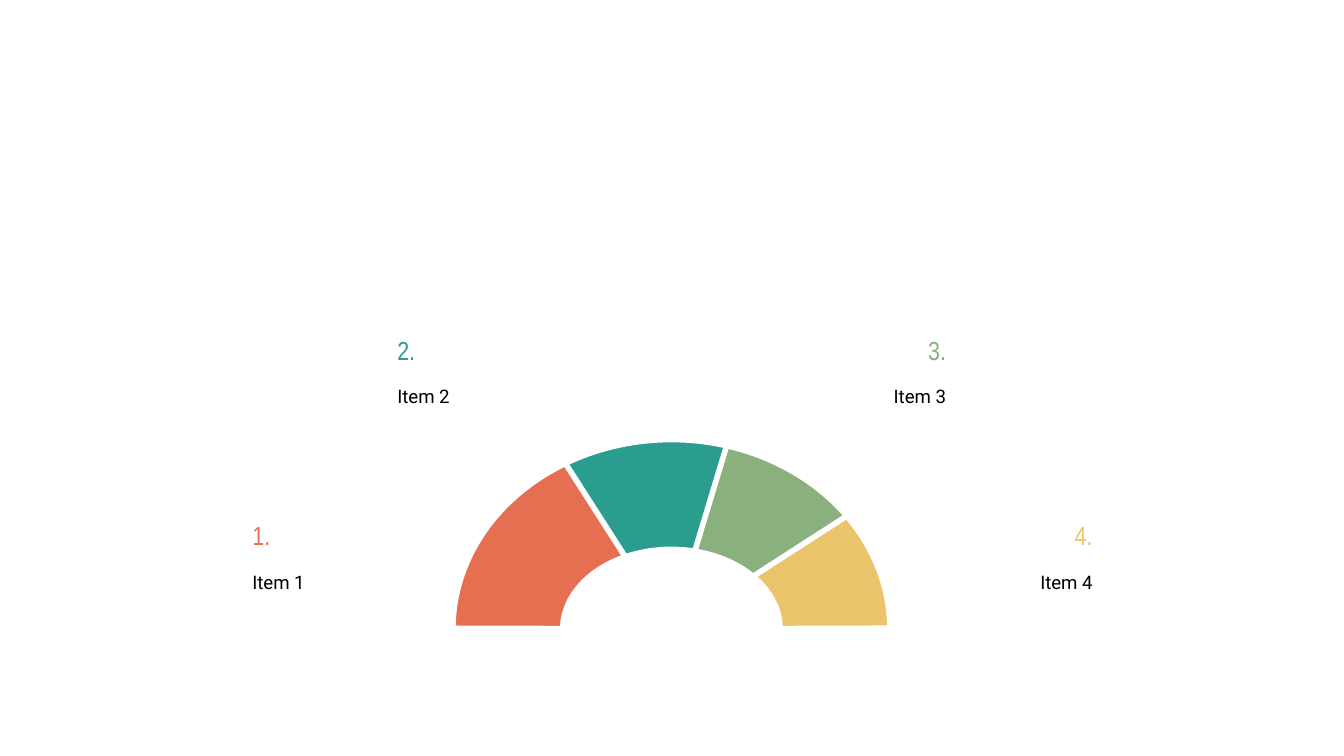
"""Build a slide with a four-part half ring and its numbered labels."""
from dataclasses import dataclass

from pptx import Presentation
from pptx.dml.color import RGBColor
from pptx.enum.shapes import MSO_SHAPE
from pptx.enum.text import MSO_ANCHOR, PP_ALIGN
from pptx.slide import Slide
from pptx.util import Cm, Pt

COLORS = {
    "coral": "E76F51",
    "teal": "2A9D8F",
    "green": "8AB17D",
    "yellow": "E9C46A",
    "black": "000000",
    "white": "FFFFFF",
}
LABEL_WIDTH = 4.06
NUMBER_HEIGHT = 0.64
ITEM_HEIGHT = 1.17
ITEM_OFFSET = 0.61
RING = (Cm(8.56), Cm(8.31), Cm(8.26), Cm(7.16))
DEGREE = 0.6


@dataclass
class Segment:
    number: int
    color: str
    start: float
    end: float
    thickness: float
    left: float
    top: float
    align: PP_ALIGN


SEGMENTS = [
    Segment(2, "teal", 237.16, 287.97, 0.29, 7.26, 6.3, PP_ALIGN.LEFT),
    Segment(1, "coral", 180.18, 237.38, 0.29, 4.52, 9.8, PP_ALIGN.LEFT),
    Segment(3, "green", 286.76, 328.46, 0.29, 14.07, 6.3, PP_ALIGN.RIGHT),
    Segment(4, "yellow", 327.21, 359.82, 0.29, 16.84, 9.8, PP_ALIGN.RIGHT),
]


def rgb(name: str) -> RGBColor:
    return RGBColor.from_string(COLORS[name])


def add_text(s: Slide, text: str, *, left: float, top: float, height: float,
             font: str, size: int, color: str, align: PP_ALIGN) -> None:
    sp = s.shapes.add_textbox(Cm(left), Cm(top), Cm(LABEL_WIDTH), Cm(height))
    tf = sp.text_frame
    tf.word_wrap = True
    tf.vertical_anchor = MSO_ANCHOR.MIDDLE
    tf.margin_left = tf.margin_right = tf.margin_top = tf.margin_bottom = Cm(0.25)
    p = tf.paragraphs[0]
    p.alignment = align
    r = p.add_run()
    r.text = text
    r.font.name = font
    r.font.size = Pt(size)
    r.font.color.rgb = rgb(color)


def add_label(s: Slide, seg: Segment) -> None:
    add_text(s, f"{seg.number}.", left=seg.left, top=seg.top, height=NUMBER_HEIGHT,
             font="Arial Narrow", size=14, color=seg.color, align=seg.align)
    add_text(s, f"Item {seg.number}", left=seg.left, top=seg.top + ITEM_OFFSET,
             height=ITEM_HEIGHT, font="Roboto", size=10, color="black", align=seg.align)


def add_arc(s: Slide, seg: Segment) -> None:
    sp = s.shapes.add_shape(MSO_SHAPE.BLOCK_ARC, *RING)
    sp.shadow.inherit = False
    sp.adjustments[0] = seg.start * DEGREE
    sp.adjustments[1] = seg.end * DEGREE
    sp.adjustments[2] = seg.thickness
    sp.fill.solid()
    sp.fill.fore_color.rgb = rgb(seg.color)
    sp.line.color.rgb = rgb("white")
    sp.line.width = Pt(3)


def main() -> None:
    prs = Presentation()
    prs.slide_width, prs.slide_height = Cm(25.4), Cm(14.29)
    s = prs.slides.add_slide(prs.slide_layouts[6])
    for seg in SEGMENTS:
        add_label(s, seg)
    for seg in SEGMENTS:
        add_arc(s, seg)
    prs.save("out.pptx")


if __name__ == "__main__":
    main()
